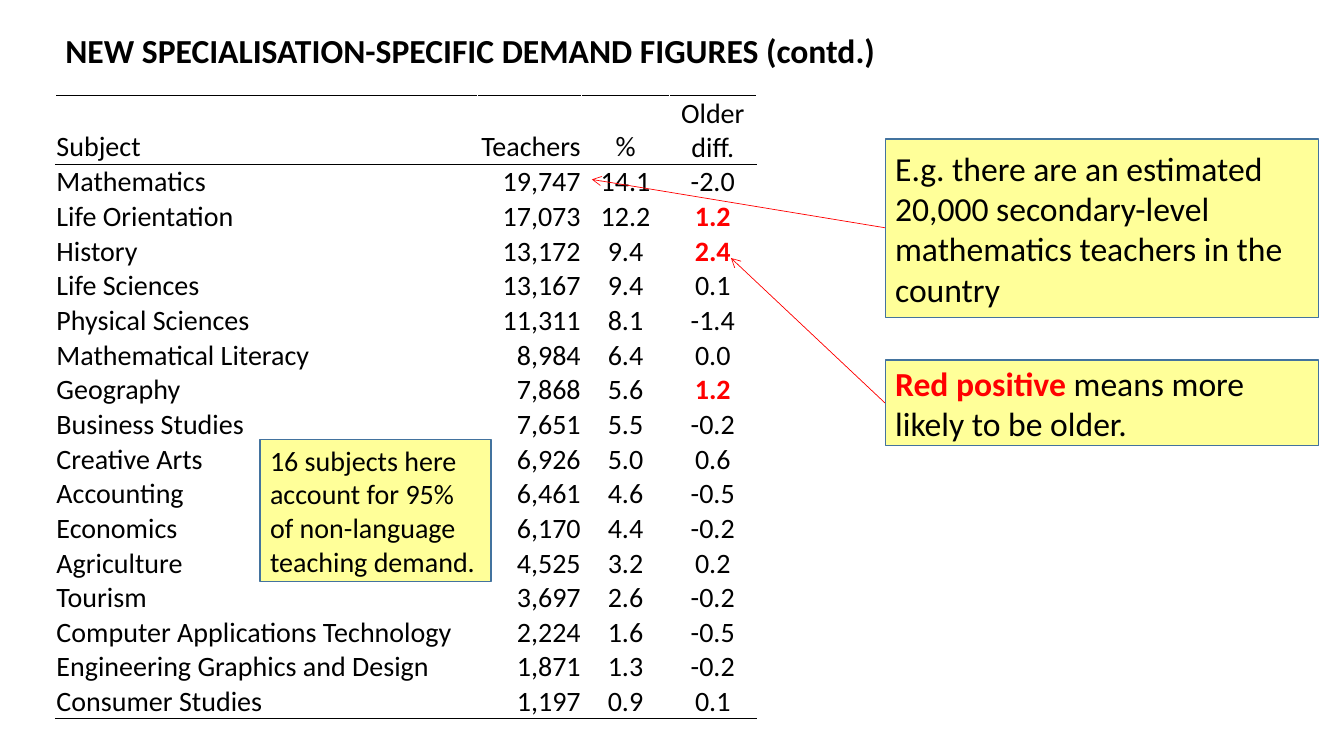
"""Build the slide on teacher demand by subject specialisation."""
from lxml.etree import SubElement
from pptx import Presentation
from pptx.dml.color import RGBColor
from pptx.enum.shapes import MSO_CONNECTOR, MSO_SHAPE
from pptx.enum.text import MSO_ANCHOR as ANCHOR, PP_ALIGN as ALIGN
from pptx.oxml import parse_xml
from pptx.oxml.ns import nsdecls, qn
from pptx.util import Inches, Pt

BLACK, WHITE, RED = "000000", "FFFFFF", "FF0000"
YELLOW, BLUE = "FFFF99", "43739E"


def rgb(value):
    return RGBColor.from_string(value)


def write(paragraph, text, size, color=BLACK, bold=False):
    run = paragraph.add_run()
    run.text = text
    font_format = {"name": "Calibri", "size": Pt(size), "bold": bold}
    for attribute, value in font_format.items():
        setattr(run.font, attribute, value)
    run.font.color.rgb = rgb(color)


demand = [
    ("Subject", "Teachers", "%", "Older diff."),
    ("Mathematics", "19,747", "14.1", "-2.0"),
    ("Life Orientation", "17,073", "12.2", "1.2"),
    ("History", "13,172", "9.4", "2.4"),
    ("Life Sciences", "13,167", "9.4", "0.1"),
    ("Physical Sciences", "11,311", "8.1", "-1.4"),
    ("Mathematical Literacy", "8,984", "6.4", "0.0"),
    ("Geography", "7,868", "5.6", "1.2"),
    ("Business Studies", "7,651", "5.5", "-0.2"),
    ("Creative Arts", "6,926", "5.0", "0.6"),
    ("Accounting", "6,461", "4.6", "-0.5"),
    ("Economics", "6,170", "4.4", "-0.2"),
    ("Agriculture", "4,525", "3.2", "0.2"),
    ("Tourism", "3,697", "2.6", "-0.2"),
    ("Computer Applications Technology", "2,224", "1.6", "-0.5"),
    ("Engineering Graphics and Design", "1,871", "1.3", "-0.2"),
    ("Consumer Studies", "1,197", "0.9", "0.1"),
]
columns = [(4.19, ALIGN.LEFT), (1.03, ALIGN.RIGHT), (0.87, ALIGN.CENTER), (0.86, ALIGN.CENTER)]
last = len(demand) - 1

prs = Presentation()
prs.slide_width, prs.slide_height = Inches(13.33), Inches(7.5)
slide = prs.slides.add_slide(prs.slide_layouts[6])

title = slide.shapes.add_textbox(Inches(0.55), Inches(0.25), Inches(11.63), Inches(0.5)).text_frame
title.word_wrap = True
write(title.paragraphs[0], "NEW SPECIALISATION-SPECIFIC DEMAND FIGURES (contd.)", 24, bold=True)

table = slide.shapes.add_table(len(demand), len(columns), Inches(0.55), Inches(0.95),
                               Inches(6.95), Inches(6.12)).table
table.first_row = table.horz_banding = False
for column, (width, _) in zip(table.columns, columns):
    column.width = Inches(width)

cell_format = {
    "margin_left": Inches(0.01), "margin_right": Inches(0.01),
    "margin_top": Inches(0.01), "margin_bottom": 0,
    "vertical_anchor": ANCHOR.BOTTOM,
}
for r, record in enumerate(demand):
    table.rows[r].height = Inches(0.34 if r else 0.68)
    borders = {
        "L": WHITE, "R": WHITE,
        "T": BLACK if r in (0, 1) else WHITE,
        "B": BLACK if r in (0, last) else WHITE,
    }
    for c, text in enumerate(record):
        cell = table.cell(r, c)
        for attribute, value in cell_format.items():
            setattr(cell, attribute, value)
        for side, color in borders.items():
            cell._tc.get_or_add_tcPr().append(parse_xml(
                f'<a:ln{side} {nsdecls("a")} w="12700"><a:solidFill>'
                f'<a:srgbClr val="{color}"/></a:solidFill></a:ln{side}>'))
        cell.fill.solid()
        cell.fill.fore_color.rgb = rgb(WHITE)
        paragraph = cell.text_frame.paragraphs[0]
        paragraph.alignment = columns[c][1]
        older = r > 0 and c == 3 and float(text) > 1
        write(paragraph, text, 20, RED if older else BLACK, older)

arrows = [((8.78, 2.26), (5.87, 1.78)), ((8.78, 4), (7.25, 2.56))]
for start, end in arrows:
    arrow = slide.shapes.add_connector(MSO_CONNECTOR.STRAIGHT, *map(Inches, start + end))
    arrow.line.color.rgb = rgb(RED)
    arrow.line.width = Pt(0.5)
    SubElement(arrow.line._get_or_add_ln(), qn("a:tailEnd"), type="arrow")
    SubElement(arrow._element.spPr, qn("a:effectLst"))

notes = [
    ((8.78, 1.38, 4.3, 1.77), 24,
     [("E.g. there are an estimated 20,000 secondary-level mathematics teachers in the country",)]),
    ((8.78, 3.57, 4.3, 0.85), 24,
     [("Red positive ", RED, True), ("means more likely to be older.",)]),
    ((2.58, 4.36, 2.29, 1.41), 20,
     [("16 subjects here account for 95% of non-language teaching demand.",)]),
]
for place, size, runs in notes:
    note = slide.shapes.add_shape(MSO_SHAPE.RECTANGLE, *map(Inches, place))
    note.shadow.inherit = False
    note.fill.solid()
    note.fill.fore_color.rgb = rgb(YELLOW)
    note.line.color.rgb = rgb(BLUE)
    note.line.width = Pt(1)
    note.text_frame.word_wrap = True
    note.text_frame.vertical_anchor = ANCHOR.MIDDLE
    paragraph = note.text_frame.paragraphs[0]
    paragraph.alignment = ALIGN.LEFT
    for text, *style in runs:
        write(paragraph, text, size, *style)

prs.save("out.pptx")
